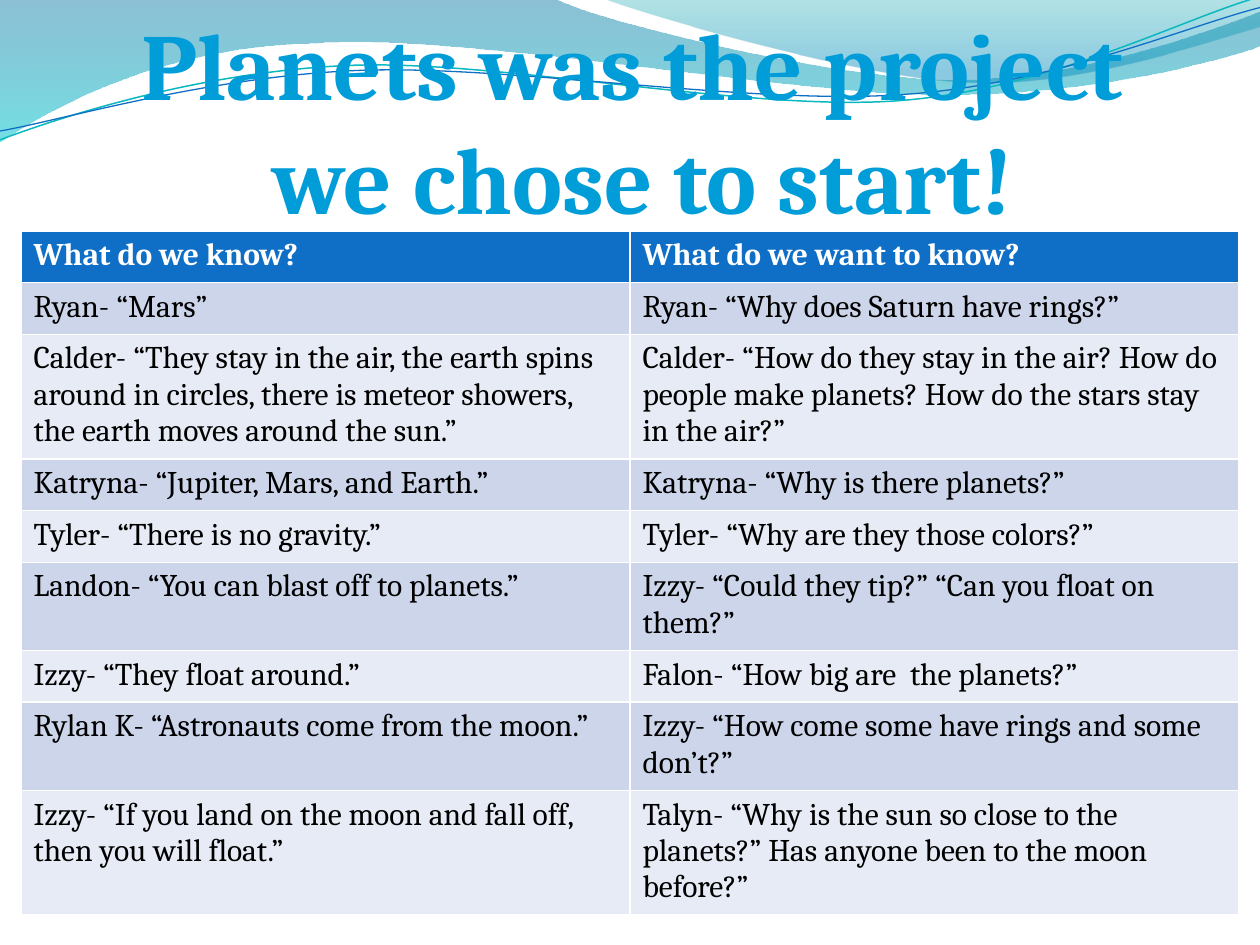
from lxml import etree
from pptx import Presentation
from pptx import util as u
from pptx.dml.color import RGBColor
from pptx.enum import text
from pptx.oxml.ns import qn

FONT = "Cambria"

# Wave outlines on a grid of ten columns: a start, then line or curve points
BROAD_WAVE = [(0, 0), [(4.4, -0.01)],
              [(4.76, 0.17), (6.64, 0.63), (7.58, 0.63)],
              [(8.53, 0.63), (9.58, 0.26), (10, 0.09)], [(10.01, 0.36)],
              [(9.83, 0.44), (8.7, 0.76), (7.46, 0.75)],
              [(6.22, 0.75), (3.82, 0.28), (2.57, 0.34)],
              [(1.29, 0.36), (0.46, 0.83), (-0.01, 1.13)], [(0, 0)]]
RIGHT_WAVE = [(4.79, -0.01), [(5.09, 0.11), (6.82, 0.62), (7.69, 0.65)],
              [(8.56, 0.69), (9.61, 0.32), (10, 0.21)], [(10, 0)],
              [(4.79, -0.01)]]
TEAL_LINE = [(0, 1.11), [(0.48, 0.93), (1.58, 0.57), (2.77, 0.52)],
             [(3.95, 0.47), (5.93, 0.89), (7.13, 0.8)],
             [(8.33, 0.71), (9.38, 0.15), (9.98, -0.02)]]
BLUE_LINE = [(0, 1.04), [(0.47, 0.96), (1.64, 0.61), (2.83, 0.56)],
             [(4.03, 0.51), (5.97, 0.84), (7.17, 0.75)],
             [(8.36, 0.67), (9.41, 0.21), (10, 0.06)]]

TITLE = ["Planets was the project", " we chose to start!"]
ROWS = [
    ("What do we know?", "What do we want to know?"),
    ("Ryan- “Mars”", "Ryan- “Why does Saturn have rings?”"),
    ("Calder- “They stay in the air, the earth spins around in circles, "
     "there is meteor showers, the earth moves around the sun.”",
     "Calder- “How do they stay in the air? How do people make planets? "
     "How do the stars stay in the air?”"),
    ("Katryna- “Jupiter, Mars, and Earth.”", "Katryna- “Why is there planets?”"),
    ("Tyler- “There is no gravity.”", "Tyler- “Why are they those colors?”"),
    ("Landon- “You can blast off to planets.”",
     "Izzy- “Could they tip?” “Can you float on them?”"),
    ("Izzy- “They float around.”", "Falon- “How big are  the planets?”"),
    ("Rylan K- “Astronauts come from the moon.”",
     "Izzy- “How come some have rings and some don’t?”"),
    ("Izzy- “If you land on the moon and fall off, then you will float.”",
     "Talyn- “Why is the sun so close to the planets?” "
     "Has anyone been to the moon before?”"),
]
ROW_LINES = [1, 1, 3, 1, 1, 2, 1, 2, 3]
LINE_HEIGHTS = {1: 0.41, 2: 0.7, 3: 0.99}  # inches by number of text lines


def rgb(value):
    return RGBColor.from_string(value)


def add_wave(slide, box, outline, closed):
    left, top, width = box

    def place(point):
        return left + point[0] * width / 10, top + point[1] * width / 10

    builder = slide.shapes.build_freeform(*place(outline[0]), scale=1.0)
    for part in outline[1:]:
        builder.add_line_segments([place(point) for point in part], close=False)
    sp = builder.convert_to_shape()
    sp.shadow.inherit = False

    # Join each three points of a curve into one cubic segment
    route = next(sp._element.iter(qn("a:path")))
    lines = iter(route.findall(qn("a:lnTo")))
    for part in outline[1:]:
        pieces = [next(lines) for _ in part]
        if len(pieces) == 3:
            curve = etree.Element(qn("a:cubicBezTo"))
            pieces[0].addprevious(curve)
            for piece in pieces:
                curve.append(piece[0])
                route.remove(piece)
    if closed:
        etree.SubElement(route, qn("a:close"))
    return sp


def add_waves(slide, box):
    # Translucent gradient bands: colour, position, opacity in percent
    for outline, stops in (
            (BROAD_WAVE, [("0074A1", 0, 45), ("00C6CF", 1, 55)]),
            (RIGHT_WAVE, [("00A1A9", 0, 30), ("008BBF", 0.8, 45)])):
        sp = add_wave(slide, box, outline, True)
        sp.line.fill.background()
        sp.fill.gradient()
        sp.fill.gradient_angle = 270
        for stop, (color, position, _) in zip(sp.fill.gradient_stops, stops):
            stop.color.rgb = rgb(color)
            stop.position = position
        colors = sp._element.spPr.iter(qn("a:srgbClr"))
        for node, (_, _, opacity) in zip(colors, stops):
            etree.SubElement(node, qn("a:alpha"), val=str(opacity * 1000))
    # Thin lines
    for outline, color, weight in ((TEAL_LINE, "0AB8BF", 0.85),
                                   (BLUE_LINE, "0F6FC6", 0.75)):
        sp = add_wave(slide, box, outline, False)
        sp.fill.background()
        sp.line.color.rgb = rgb(color)
        sp.line.width = u.Pt(weight)


def place_title(slide, box):
    title = slide.shapes.title
    title.left, title.top, title.width, title.height = box
    tf = title.text_frame
    tf.text = "\n".join(TITLE)
    tf.word_wrap = False
    tf.auto_size = text.MSO_AUTO_SIZE.NONE
    tf.vertical_anchor = text.MSO_ANCHOR.TOP
    for p in tf.paragraphs:
        p.alignment = text.PP_ALIGN.CENTER
        p.space_before = u.Pt(0)
        p.font.size, p.font.name, p.font.bold = u.Pt(54), FONT, True
        p.font.color.rgb = rgb("009DD9")
    # Bring the title in front of the waves
    slide.shapes._spTree.append(title._element)


def add_questions(slide, box):
    # The default table style draws the white rules
    table = slide.shapes.add_table(len(ROWS), len(ROWS[0]), *box).table
    for r, row in enumerate(ROWS):
        header = r == 0
        table.rows[r].height = u.Inches(LINE_HEIGHTS[ROW_LINES[r]])
        for c, words in enumerate(row):
            cell = table.cell(r, c)
            cell.fill.solid()
            cell.fill.fore_color.rgb = rgb(
                "0F6FC6" if header else "CCD5EA" if r % 2 else "E7EBF5")
            cell.text = words
            p = cell.text_frame.paragraphs[0]
            p.font.size, p.font.name, p.font.bold = u.Pt(18), FONT, header
            p.font.color.rgb = rgb("FFFFFF" if header else "000000")


def main():
    prs = Presentation()
    prs.slide_width, prs.slide_height = u.Inches(10), u.Inches(7.5)
    w, h = prs.slide_width, prs.slide_height
    slide = prs.slides.add_slide(prs.slide_layouts[5])
    add_waves(slide, (0, 0, w))
    place_title(slide, (w // 12, 0, int(w * 0.837), int(h * 0.256)))
    height = u.Inches(sum(LINE_HEIGHTS[n] for n in ROW_LINES))
    add_questions(slide, (w // 60, h * 11 // 45, w * 29 // 30, height))
    prs.save("out.pptx")


if __name__ == "__main__":
    main()
